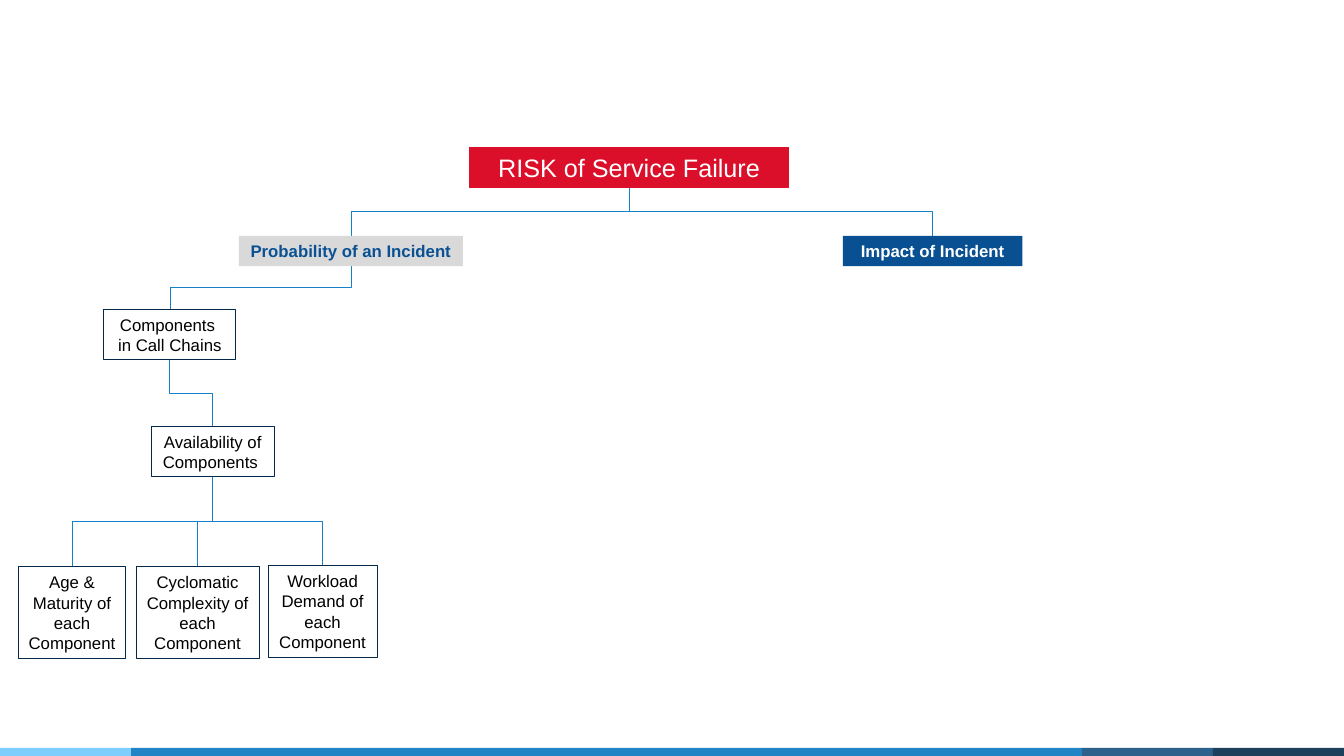
from dataclasses import dataclass
from typing import Optional

from lxml.etree import SubElement
from pptx import Presentation
from pptx.dml.color import RGBColor
from pptx.enum.shapes import MSO_CONNECTOR as Connector, MSO_SHAPE as Preset
from pptx.enum.text import MSO_ANCHOR as Anchor, PP_ALIGN as Align
from pptx.oxml.ns import qn
from pptx.util import Inches, Pt

LINK_COLOR = "1581C9"
OUTLINE = "042849"


@dataclass(frozen=True)
class Node:
    text: str
    left: float
    top: float
    width: float
    height: float
    parent: Optional[str] = None
    fill: Optional[str] = None
    outline: Optional[str] = OUTLINE
    color: str = "000000"
    size: int = 12
    bold: bool = False

    @property
    def center(self) -> float:
        return self.left + self.width / 2

    @property
    def bottom(self) -> float:
        return self.top + self.height


@dataclass(frozen=True)
class FooterBand:
    left: float
    width: float
    fill: str


NODES = {
    "risk": Node("RISK of Service Failure", 4.66, 1.46, 3.16, 0.4,
                 fill="DB0F29", outline="DB0F29", color="FFFFFF", size=18),
    "probability": Node("Probability of an Incident", 2.37, 2.34, 2.22, 0.3, "risk",
                        fill="D9D9D9", outline=None, color="0A5193", bold=True),
    "impact": Node("Impact of Incident", 8.36, 2.34, 1.78, 0.3, "risk",
                   fill="095092", outline=None, color="FFFFFF", bold=True),
    "chains": Node("Components \vin Call Chains", 1.03, 3.07, 1.31, 0.5, "probability"),
    "availability": Node("Availability of Components ", 1.5, 4.23, 1.22, 0.5, "chains"),
    "age": Node("Age & Maturity of each Component", 0.18, 5.62, 1.07, 0.91, "availability"),
    "complexity": Node("Cyclomatic Complexity of each Component",
                       1.35, 5.62, 1.22, 0.91, "availability"),
    "workload": Node("Workload Demand of each Component",
                     2.66, 5.61, 1.08, 0.91, "availability"),
}

FOOTER_TOP, FOOTER_HEIGHT = 7.42, 0.08
FOOTER = [
    FooterBand(0, 1.3, "7ECEFD"),
    FooterBand(1.3, 9.43, "2185C5"),
    FooterBand(10.73, 1.3, "2C618B"),
    FooterBand(12.03, 1.3, "1D405D"),
]


def rgb(value: str) -> RGBColor:
    return RGBColor.from_string(value)


def add_box(page, left: float, top: float, width: float, height: float,
            fill: Optional[str], outline: Optional[str] = None):
    box = page.shapes.add_shape(
        Preset.RECTANGLE, Inches(left), Inches(top), Inches(width), Inches(height))
    box.shadow.inherit = False
    if fill:
        box.fill.solid()
        box.fill.fore_color.rgb = rgb(fill)
    else:
        box.fill.background()
    if outline:
        box.line.color.rgb = rgb(outline)
        box.line.width = Pt(0.75)
    else:
        box.line.fill.background()
    return box


def add_node(page, node: Node) -> None:
    box = add_box(page, node.left, node.top, node.width, node.height,
                  node.fill, node.outline)
    frame = box.text_frame
    frame.word_wrap = True
    frame.vertical_anchor = Anchor.MIDDLE
    frame.margin_left = frame.margin_right = Inches(0.05)
    frame.text = node.text
    para = frame.paragraphs[0]
    para.alignment = Align.CENTER
    para.font.name = "Arial"
    para.font.size = Pt(node.size)
    para.font.bold = node.bold
    para.font.color.rgb = rgb(node.color)


def add_link(page, parent: Node, child: Node) -> None:
    """Draw an elbow that leaves the parent downwards and enters the child from above.

    An elbow runs sideways first, so it is laid on its side and then turned upright.
    """
    to_right = child.center > parent.center
    middle_x = (parent.center + child.center) / 2
    middle_y = (parent.bottom + child.top) / 2
    half_drop = (child.top - parent.bottom) / 2
    half_span = abs(child.center - parent.center) / 2
    reach = -half_drop if to_right else half_drop
    link = page.shapes.add_connector(
        Connector.ELBOW,
        Inches(middle_x - reach), Inches(middle_y - half_span),
        Inches(middle_x + reach), Inches(middle_y + half_span))
    link.rotation = 270 if to_right else 90
    link.line.color.rgb = rgb(LINK_COLOR)
    link.line.width = Pt(0.5)
    SubElement(link._element.spPr, qn("a:effectLst"))


def main() -> None:
    deck = Presentation()
    deck.slide_width, deck.slide_height = Inches(13.33), Inches(7.5)
    page = deck.slides.add_slide(deck.slide_layouts[6])
    for band in FOOTER:
        add_box(page, band.left, FOOTER_TOP, band.width, FOOTER_HEIGHT, band.fill)
    for node in NODES.values():
        if node.parent:
            add_link(page, NODES[node.parent], node)
    for node in NODES.values():
        add_node(page, node)
    deck.save("out.pptx")


if __name__ == "__main__":
    main()
